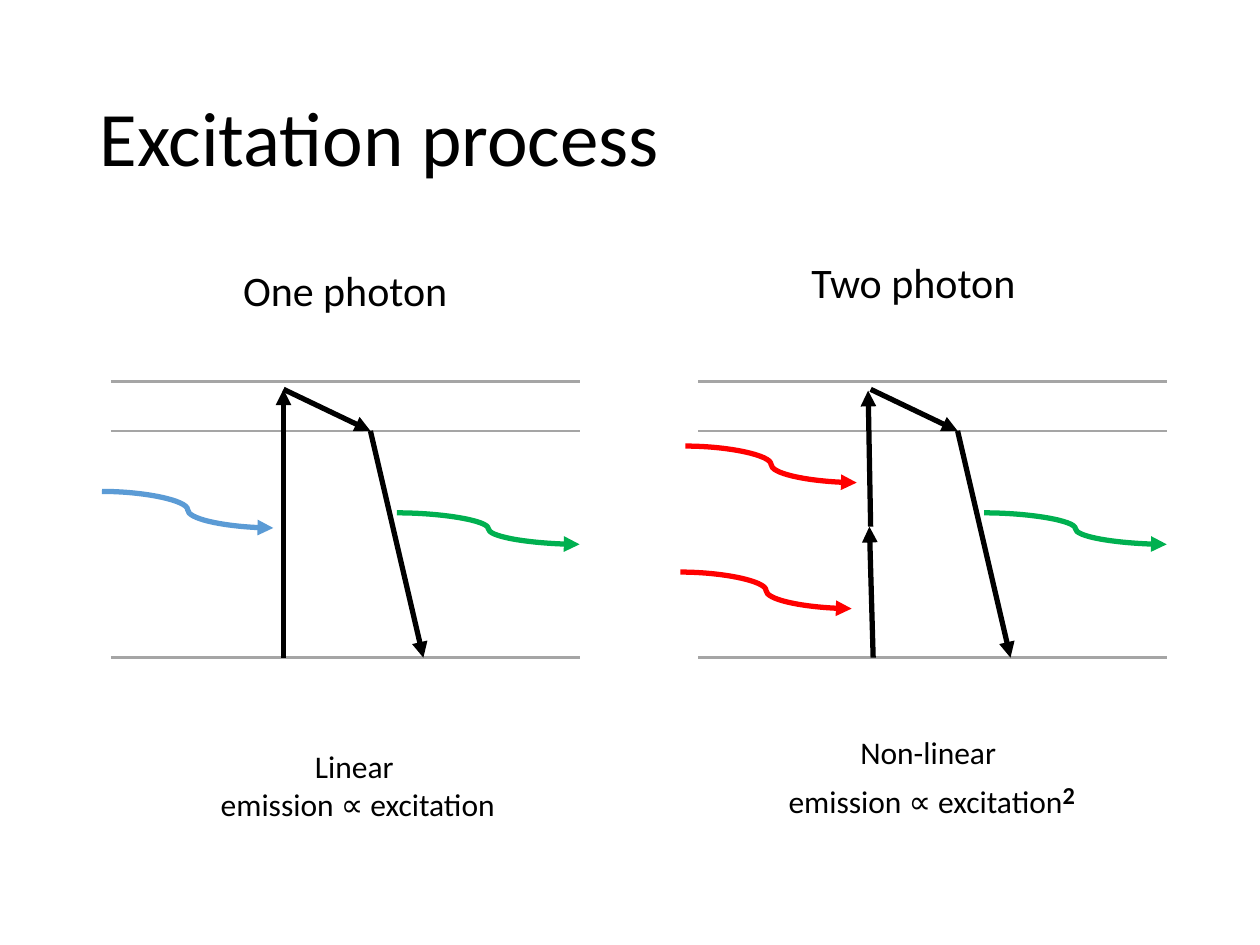
from dataclasses import dataclass

from pptx import Presentation
from pptx.dml.color import RGBColor
from pptx.enum.shapes import MSO_CONNECTOR
from pptx.enum.text import MSO_ANCHOR, MSO_AUTO_SIZE, PP_ALIGN
from pptx.oxml.ns import qn
from pptx.oxml.xmlchemy import OxmlElement
from pptx.shapes.connector import Connector
from pptx.slide import Slide
from pptx.text.text import _Run
from pptx.util import Inches, Pt

STRAIGHT, CURVE = MSO_CONNECTOR.STRAIGHT, MSO_CONNECTOR.CURVE
LEFT, CENTER = PP_ALIGN.LEFT, PP_ALIGN.CENTER
MIDDLE = MSO_ANCHOR.MIDDLE
NO_FIT, GROW = MSO_AUTO_SIZE.NONE, MSO_AUTO_SIZE.SHAPE_TO_FIT_TEXT

COLORS = {
    "text": "000000",
    "level": "A5A5A5",
    "transition": "000000",
    "one_photon": "5B9BD5",
    "two_photon": "FF0000",
    "emission": "00B050",
}
FONT = "Calibri"
DIAGRAM_LEFTS = (0.88, 5.54)
LEVEL_WIDTH = 3.72
GROUND, EXCITED, TOP = 5.22, 3.42, 3.03
PHOTON_WIDTH, PHOTON_DROP = 1.36, 0.29


@dataclass(frozen=True)
class Arrow:
    start: tuple[float, float]
    end: tuple[float, float]
    color: str = "transition"
    kind: MSO_CONNECTOR = STRAIGHT


@dataclass(frozen=True)
class Label:
    left: float
    top: float
    width: float
    height: float
    size: int
    lines: tuple[str, ...]
    exponent: str = ""


EXCITATIONS = (
    Arrow((2.25, GROUND), (2.25, 3.09)),
    Arrow((6.93, GROUND), (6.9, 4.18)),
    Arrow((6.91, 4.18), (6.89, 3.1)),
)
PHOTONS = (
    (0.81, 3.9, "one_photon"),
    (5.4, 4.54, "two_photon"),
    (5.44, 3.54, "two_photon"),
)
LABELS = (
    Label(1.82, 2.05, 1.84, 0.5, 24, ("One photon",)),
    Label(6.33, 1.99, 1.84, 0.5, 24, ("Two photon",)),
    Label(1.64, 5.88, 2.4, 0.71, 18, ("Linear ", "emission ∝ excitation")),
    Label(6.14, 5.77, 2.51, 0.81, 18,
          ("Non-linear ", "emission ∝ excitation"), "2"),
)


def set_all(target: object, values: dict[str, object]) -> None:
    for name, value in values.items():
        setattr(target, name, value)


def format_span(span: _Run, size: int, bold: bool = False) -> None:
    set_all(span.font, {"name": FONT, "size": Pt(size), "bold": bold})
    span.font.color.rgb = RGBColor.from_string(COLORS["text"])


def draw_line(page: Slide, line: Arrow, weight: float) -> Connector:
    connector = page.shapes.add_connector(
        line.kind, *(Inches(value) for value in line.start + line.end))
    connector.line.color.rgb = RGBColor.from_string(COLORS[line.color])
    connector.line.width = Pt(weight)
    connector._element.spPr.append(OxmlElement("a:effectLst"))
    return connector


def draw_arrow(page: Slide, arrow: Arrow) -> None:
    connector = draw_line(page, arrow, 3)
    head = OxmlElement("a:tailEnd")
    head.set("type", "triangle")
    connector._element.spPr.find(qn("a:ln")).append(head)


def draw_diagram(page: Slide, left: float) -> None:
    right = left + LEVEL_WIDTH
    for level in (GROUND, EXCITED, TOP):
        draw_line(page, Arrow((left, level), (right, level), "level"), 1.5)
    relaxed = (left + 2.06, EXCITED)
    for arrow in (
        Arrow((left + 1.37, 3.09), relaxed),
        Arrow(relaxed, (left + 2.48, GROUND)),
        Arrow((left + 2.27, 4.07), (right, 4.32), "emission", CURVE),
    ):
        draw_arrow(page, arrow)


def draw_label(page: Slide, label: Label) -> None:
    box = page.shapes.add_textbox(
        Inches(label.left), Inches(label.top),
        Inches(label.width), Inches(label.height))
    frame = box.text_frame
    set_all(frame, {"word_wrap": False, "auto_size": GROW})
    for index, line in enumerate(label.lines):
        para = frame.add_paragraph() if index else frame.paragraphs[0]
        para.alignment = CENTER
        span = para.add_run()
        span.text = line
        format_span(span, label.size)
    if label.exponent:
        span = para.add_run()
        span.text = label.exponent
        format_span(span, 24, bold=True)
        span._r.get_or_add_rPr().set("baseline", "20000")


def draw_title(page: Slide, text: str) -> None:
    title = page.shapes.title
    set_all(title, {"left": Inches(0.69), "top": Inches(0.4),
                    "width": Inches(8.62), "height": Inches(1.45)})
    set_all(title.text_frame, {"vertical_anchor": MIDDLE,
                               "word_wrap": True, "auto_size": NO_FIT})
    para = title.text_frame.paragraphs[0]
    set_all(para, {"alignment": LEFT, "line_spacing": 0.9})
    span = para.add_run()
    span.text = text
    format_span(span, 44)


def main() -> None:
    deck = Presentation()
    set_all(deck, {"slide_width": Inches(10), "slide_height": Inches(7.5)})
    page = deck.slides.add_slide(deck.slide_layouts[5])
    draw_title(page, "Excitation process")
    for left in DIAGRAM_LEFTS:
        draw_diagram(page, left)
    for arrow in EXCITATIONS:
        draw_arrow(page, arrow)
    for left, top, color in PHOTONS:
        end = (left + PHOTON_WIDTH, top + PHOTON_DROP)
        draw_arrow(page, Arrow((left, top), end, color, CURVE))
    for label in LABELS:
        draw_label(page, label)
    deck.save("out.pptx")


if __name__ == "__main__":
    main()
